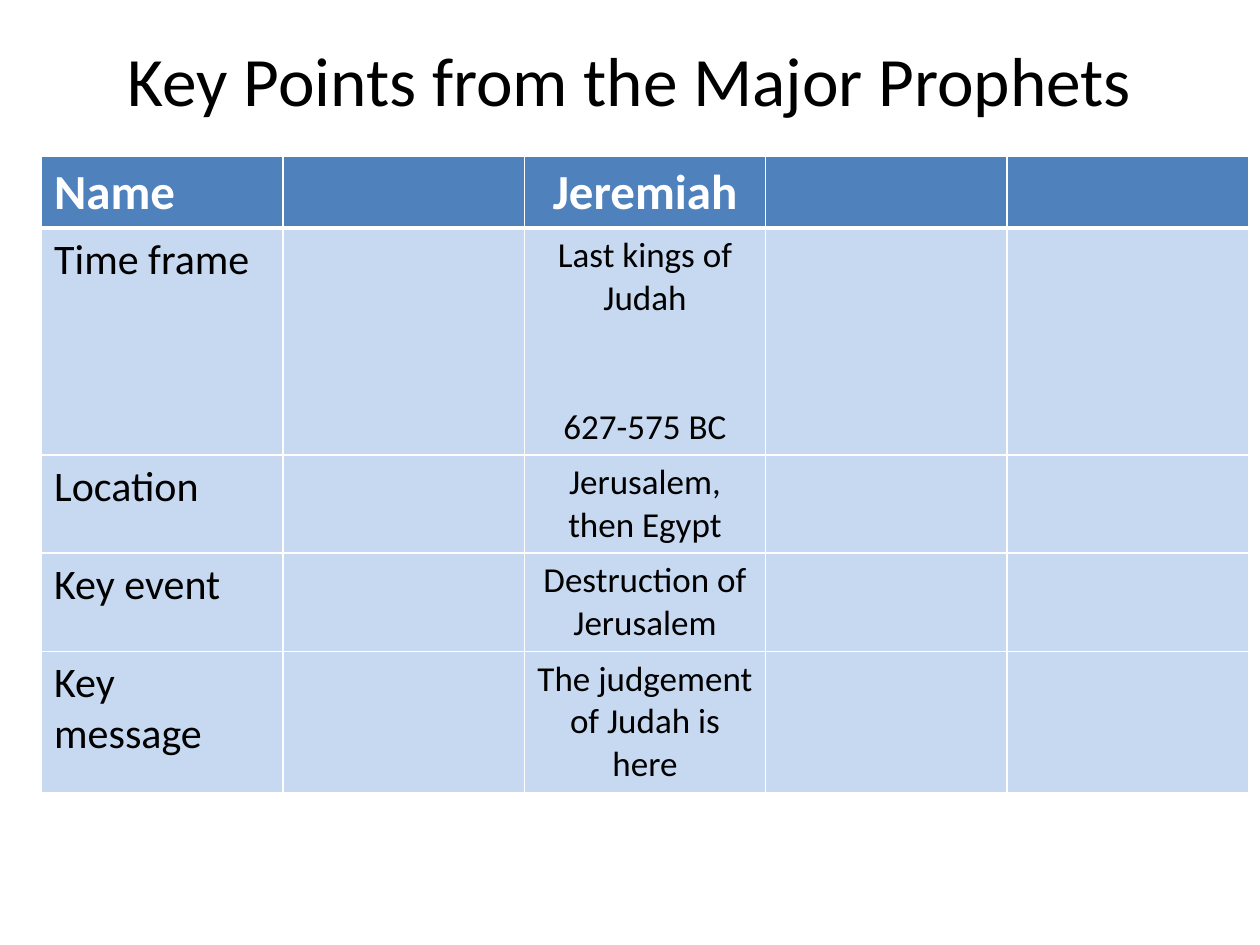
from pptx import Presentation
from pptx.dml.color import RGBColor
from pptx.enum.text import MSO_ANCHOR, PP_ALIGN
from pptx.oxml import parse_xml
from pptx.oxml.ns import nsdecls
from pptx.util import Inches, Pt

WHITE = RGBColor(0xFF, 0xFF, 0xFF)
BLACK = RGBColor(0, 0, 0)
BLUE = RGBColor(0x4F, 0x81, 0xBD)
PALE = RGBColor(0xC6, 0xD9, 0xF1)
FONT = "Calibri"

# Label, lines about the prophet, row height
ROWS = [
    ("Name", ["Jeremiah"], 0.57),
    ("Time frame", ["Last kings of Judah", "627-575 BC"], 1.8),
    ("Location", ["Jerusalem,", "then Egypt"], 0.78),
    ("Key event", ["Destruction of Jerusalem"], 0.78),
    ("Key message", ["The judgement of Judah is here"], 1.12),
]
COLS = 5
PROPHET = 2  # column of the prophet filled in
DATE_GAP = Pt(49)


def write(frame, lines, size, color, align, bold=False):
    frame.text = "\n".join(lines)
    for para in frame.paragraphs:
        para.alignment = align
        font = para.font
        font.name, font.size, font.bold = FONT, Pt(size), bold
        font.color.rgb = color


def set_edges(cell, bottom):
    props = cell._tc.get_or_add_tcPr()
    widths = {"lnL": 1, "lnR": 1, "lnT": 1, "lnB": bottom}
    for place, (tag, width) in enumerate(widths.items()):
        props.insert(place, parse_xml(
            f'<a:{tag} {nsdecls("a")} w="{Pt(width)}"><a:solidFill>'
            f'<a:srgbClr val="{WHITE}"/></a:solidFill></a:{tag}>'))


def add_title(slide, left, top, width, height):
    frame = slide.shapes.add_textbox(left, top, width, height).text_frame
    frame.word_wrap = True
    frame.vertical_anchor = MSO_ANCHOR.MIDDLE
    write(frame, ["Key Points from the Major Prophets"], 39.6, BLACK,
          PP_ALIGN.CENTER)


def add_grid(slide, left, top, width):
    height = Inches(sum(row[2] for row in ROWS))
    table = slide.shapes.add_table(
        len(ROWS), COLS, left, top, width, height).table
    for col in table.columns:
        col.width = width // COLS

    for r, (label, lines, tall) in enumerate(ROWS):
        head = r == 0
        table.rows[r].height = Inches(tall)
        color = WHITE if head else BLACK
        for cell in table.rows[r].cells:
            cell.fill.solid()
            cell.fill.fore_color.rgb = BLUE if head else PALE
            set_edges(cell, 3 if head else 1)
        write(table.cell(r, 0).text_frame, [label], 28 if head else 24,
              color, PP_ALIGN.LEFT, head)
        write(table.cell(r, PROPHET).text_frame, lines, 28 if head else 20,
              color, PP_ALIGN.CENTER, head)

    # Set the dates apart from the reigns
    table.cell(1, PROPHET).text_frame.paragraphs[1].space_before = DATE_GAP


def main():
    deck = Presentation()
    deck.slide_width, deck.slide_height = Inches(10), Inches(7.5)
    slide = deck.slides.add_slide(deck.slide_layouts[6])
    add_title(slide, Inches(0.5), Inches(0), Inches(9), Inches(1.25))
    add_grid(slide, Inches(0.33), Inches(1.24), Inches(9.58))
    deck.save("out.pptx")


if __name__ == "__main__":
    main()
